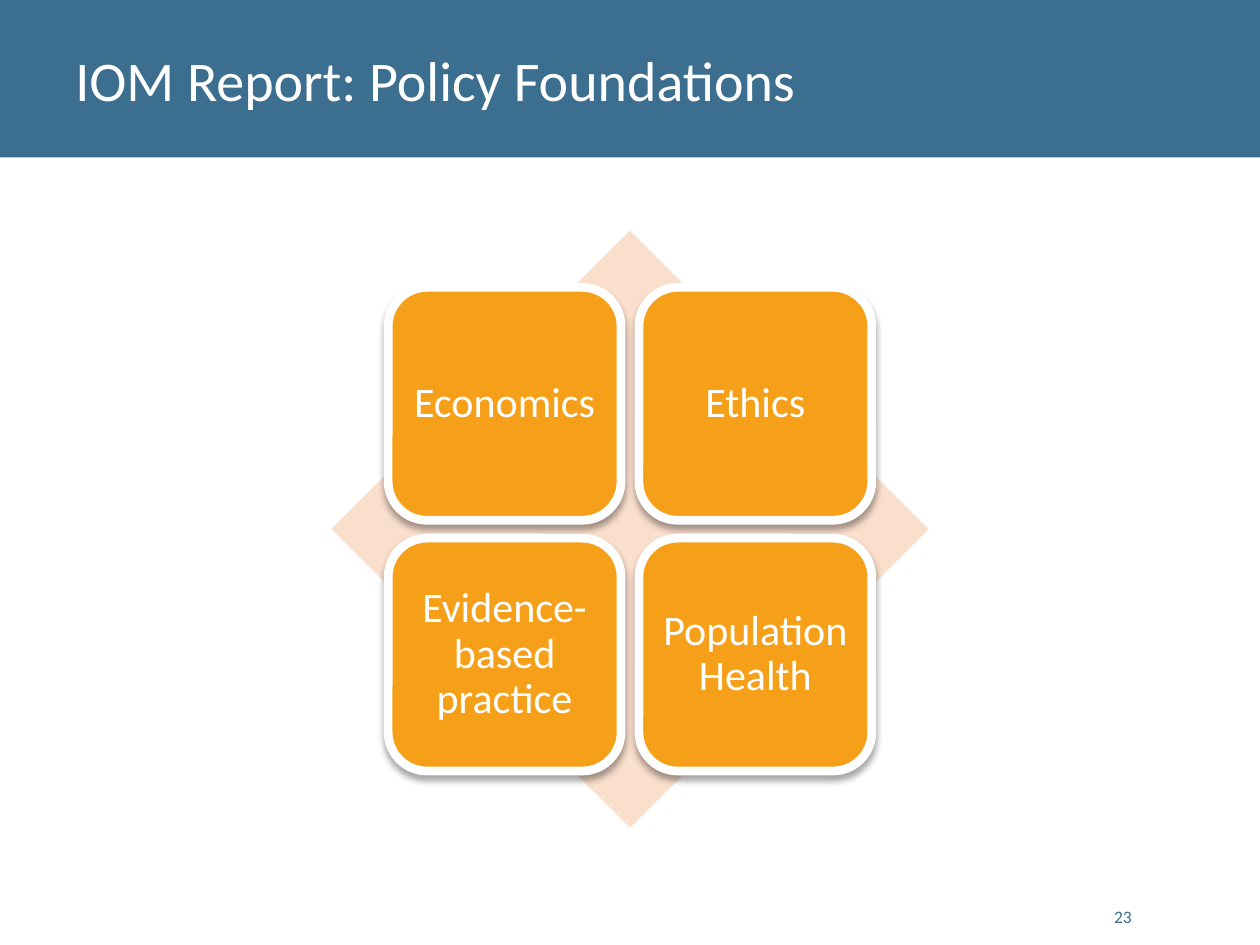
"""Builds a slide with four policy foundations set on a diamond."""
from dataclasses import dataclass
from itertools import product

from lxml import etree
from pptx import Presentation
from pptx import util as u
from pptx.dml import color
from pptx.enum import shapes, text
from pptx.oxml import ns

Kind = shapes.MSO_SHAPE
Align = text.PP_ALIGN
Anchor = text.MSO_ANCHOR


def rgb(code):
    return color.RGBColor.from_string(code)


def write(shape, words, size, ink, font="Calibri", align=Align.LEFT,
          anchor=Anchor.MIDDLE, lead=1.0):
    frame = shape.text_frame
    frame.word_wrap = True
    frame.vertical_anchor = anchor
    para = frame.paragraphs[0]
    para.alignment = align
    para.line_spacing = lead
    run = para.add_run()
    run.text = words
    run.font.name = font
    run.font.size = u.Pt(size)
    run.font.color.rgb = rgb(ink)
    return frame


@dataclass
class Deck:
    slide: object
    blue: str = "3B6E8F"
    gold: str = "F6A01A"
    peach: str = "FBDFCD"
    white: str = "FFFFFF"

    def shape(self, kind, left, top, width, height, fill):
        item = self.slide.shapes.add_shape(
            kind, u.Pt(left), u.Pt(top), u.Pt(width), u.Pt(height))
        item.shadow.inherit = False
        item.fill.solid()
        item.fill.fore_color.rgb = rgb(fill)
        item.line.fill.background()
        return item

    def label(self, words, left, top, width, height, **style):
        box = self.slide.shapes.add_textbox(
            u.Pt(left), u.Pt(top), u.Pt(width), u.Pt(height))
        write(box, words, **style)

    def shade(self, item, blur=4, drop=3, alpha=35):
        effects = item._element.spPr.find(ns.qn("a:effectLst"))
        outer = etree.SubElement(
            effects, ns.qn("a:outerShdw"), blurRad=str(u.Pt(blur)),
            dist=str(u.Pt(drop)), dir="5400000", rotWithShape="0")
        tone = etree.SubElement(outer, ns.qn("a:srgbClr"), val="000000")
        etree.SubElement(tone, ns.qn("a:alpha"), val=str(alpha * 1000))

    def tile(self, words, left, top, side):
        item = self.shape(Kind.ROUNDED_RECTANGLE, left, top, side, side, self.gold)
        item.line.color.rgb = rgb(self.white)
        item.line.width = u.Pt(5)
        self.shade(item)
        frame = write(item, words, 24, self.white, align=Align.CENTER, lead=0.9)
        frame.margin_left = frame.margin_right = u.Pt(7)
        frame.margin_top = frame.margin_bottom = u.Pt(7)


def main():
    show = Presentation()
    show.slide_width, show.slide_height = u.Pt(720), u.Pt(540)
    deck = Deck(show.slides.add_slide(show.slide_layouts[6]))

    deck.shape(Kind.RECTANGLE, 0, 0, 720, 90, deck.blue)
    deck.label("IOM Report: Policy Foundations", 36, 0, 648, 90,
               size=32, ink=deck.white)

    mid_x, mid_y, span = 360, 302.4, 341.2
    deck.shape(Kind.DIAMOND, mid_x - span / 2, mid_y - span / 2,
               span, span, deck.peach)

    side, pitch = 133.1, 143.3
    edge = (side + pitch) / 2
    names = ["Economics", "Ethics", "Evidence-based practice", "Population Health"]
    for name, (row, col) in zip(names, product(range(2), repeat=2)):
        deck.tile(name, mid_x - edge + col * pitch, mid_y - edge + row * pitch, side)

    deck.label("23", 625, 504.7, 28.8, 28.8, size=10, ink=deck.blue,
               align=Align.RIGHT, anchor=Anchor.BOTTOM)
    show.save("out.pptx")


if __name__ == "__main__":
    main()
